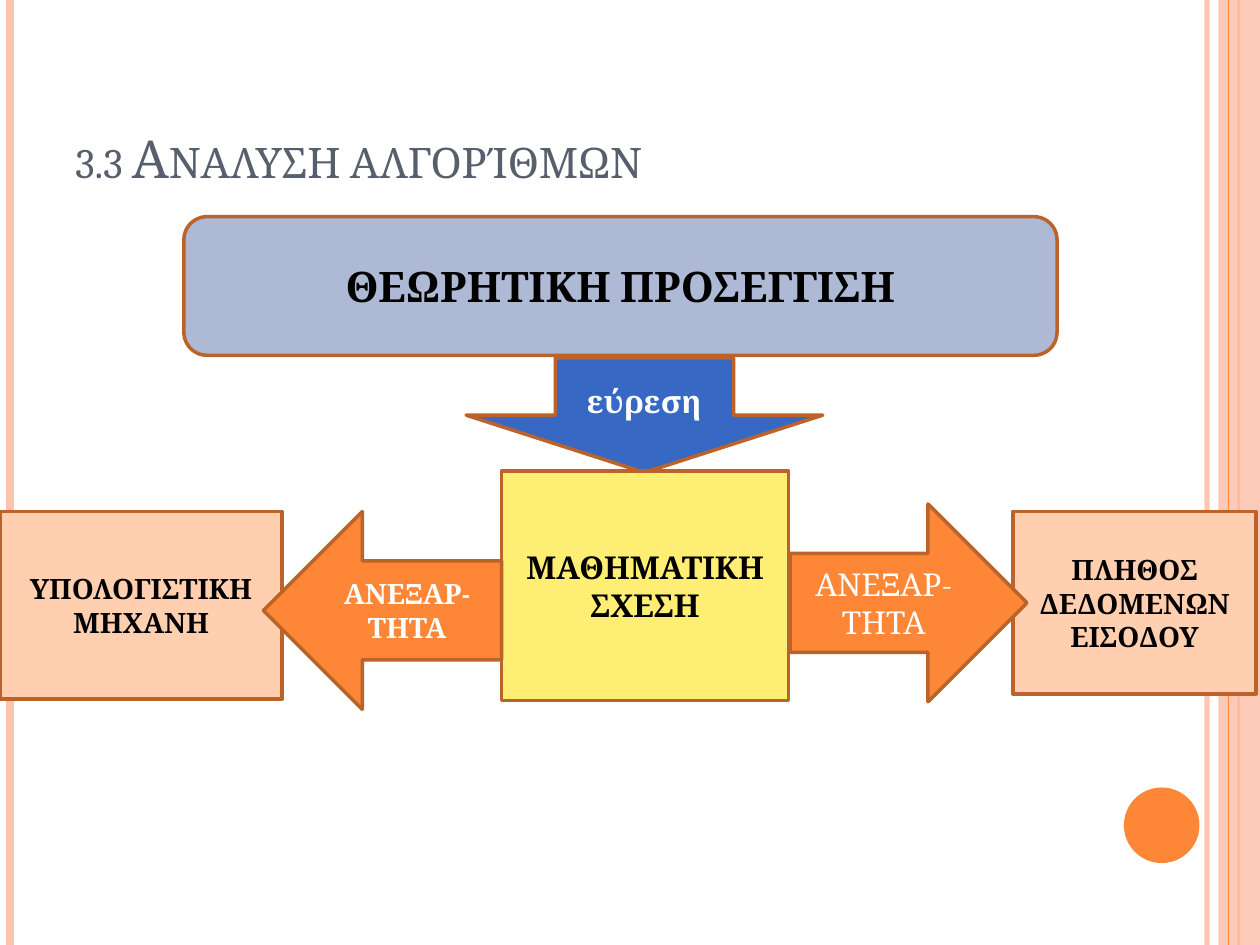
from pptx import Presentation
from pptx.dml.color import RGBColor
from pptx.enum import shapes, text
from pptx.oxml.ns import qn
from pptx.util import Inches, Pt
from lxml import etree

KIND = shapes.MSO_SHAPE
COLUMNS, ROWS = 100, 75


def rgb(value):
    return RGBColor.from_string(value)


class Deck:
    font = "Cambria"
    peach, orange, outline = "FEC3AE", "FE8637", "BC6329"

    def __init__(self):
        self.prs = Presentation()
        self.prs.slide_width, self.prs.slide_height = Inches(10), Inches(7.5)
        self.s = self.prs.slides.add_slide(self.prs.slide_layouts[6])

    def grid(self, x, y):
        return (round(self.prs.slide_width * x / COLUMNS),
                round(self.prs.slide_height * y / ROWS))

    def fade(self, sp, percent):
        for clr in sp._element.spPr.iter(qn("a:srgbClr")):
            etree.SubElement(clr, qn("a:alpha")).set("val", str(percent * 1000))

    def stripe(self, x, color, width, alpha=None):
        line = self.s.shapes.add_connector(
            shapes.MSO_CONNECTOR.STRAIGHT, *self.grid(x, 0), *self.grid(x, ROWS))
        line.line.color.rgb = rgb(color)
        line.line.width = Pt(width)
        etree.SubElement(line._element.spPr, qn("a:effectLst"))
        if alpha:
            self.fade(line, alpha)

    def plain(self, kind, x, y, w, h, fill, alpha=None):
        sp = self.s.shapes.add_shape(kind, *self.grid(x, y), *self.grid(w, h))
        sp.shadow.inherit = False
        sp.fill.solid()
        sp.fill.fore_color.rgb = rgb(fill)
        sp.line.fill.background()
        if alpha:
            self.fade(sp, alpha)
        return sp

    def label(self, tf, words, size, color, bold=False, align=text.PP_ALIGN.CENTER):
        tf.word_wrap = True
        tf.text = words
        for p in tf.paragraphs:
            p.alignment = align
            p.font.name, p.font.size, p.font.bold = self.font, Pt(size), bold
            p.font.color.rgb = rgb(color)

    def block(self, kind, x, y, w, h, fill, words, size, color="000000", bold=True):
        sp = self.plain(kind, x, y, w, h, fill)
        sp.line.color.rgb = rgb(self.outline)
        sp.line.width = Pt(2)
        sp.text_frame.vertical_anchor = text.MSO_ANCHOR.MIDDLE
        self.label(sp.text_frame, words, size, color, bold)
        return sp

    def title(self, x, y, w, h, words):
        tf = self.s.shapes.add_textbox(*self.grid(x, y), *self.grid(w, h)).text_frame
        tf.vertical_anchor = text.MSO_ANCHOR.BOTTOM
        self.label(tf, words, 30, "575F6D", align=text.PP_ALIGN.LEFT)
        for r in tf.paragraphs[0].runs:
            r._r.get_or_add_rPr().set("cap", "small")


def main():
    d = Deck()
    d.stripe(95.8, d.peach, 3, 93)
    d.stripe(0.8, d.peach, 4.5)
    d.stripe(98.3, d.orange, 1.5)
    d.plain(KIND.RECTANGLE, 96.7, 0, 3.3, ROWS, d.peach, 87)
    d.stripe(97.5, d.orange, 0.75)
    d.plain(KIND.OVAL, 89.2, 62.5, 6, 6, d.orange)
    d.title(5, 3, 81.7, 12.5, "3.3 Αναλυση αλγορίθμων")

    approach = d.block(KIND.ROUNDED_RECTANGLE, 14.6, 17.2, 69.3, 11, "AEBAD5",
                       "ΘΕΩΡΗΤΙΚΗ ΠΡΟΣΕΓΓΙΣΗ", 24)
    approach.text_frame.paragraphs[0].space_before = Pt(6)
    d.block(KIND.RECTANGLE, 80.4, 40.6, 19.3, 14.5, "FFCFAF",
            "ΠΛΗΘΟΣ ΔΕΔΟΜΕΝΩΝ ΕΙΣΟΔΟΥ", 16)
    d.block(KIND.RECTANGLE, 0, 40.6, 22.4, 14.9, "FFCFAF", "ΥΠΟΛΟΓΙΣΤΙΚΗ ΜΗΧΑΝΗ", 16)
    d.block(KIND.DOWN_ARROW, 37, 28.4, 28.3, 9.1, "3668C4", "εύρεση", 18, "FFFFFF")
    d.block(KIND.RECTANGLE, 39.8, 37.4, 22.8, 18.2, "FFEE74", "ΜΑΘΗΜΑΤΙΚΗ\nΣΧΕΣΗ", 18)
    d.block(KIND.RIGHT_ARROW, 62.7, 40, 18.8, 15.7, d.orange,
            "ΑΝΕΞΑΡ-ΤΗΤΑ", 18, "FFFFFF", bold=False)
    d.block(KIND.LEFT_ARROW, 20.9, 40.6, 18.9, 15.7, d.orange,
            "ΑΝΕΞΑΡ-ΤΗΤΑ", 16, "FFFFFF")
    d.prs.save("out.pptx")


if __name__ == "__main__":
    main()
